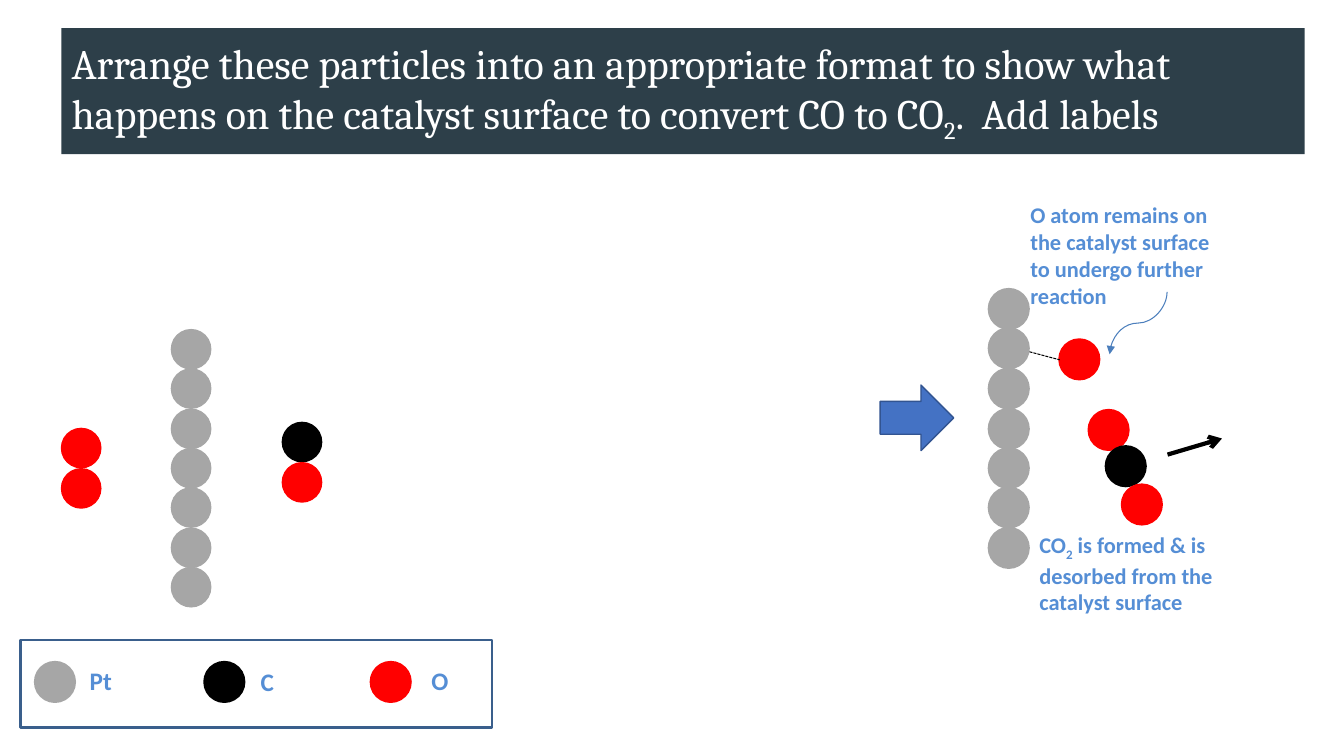
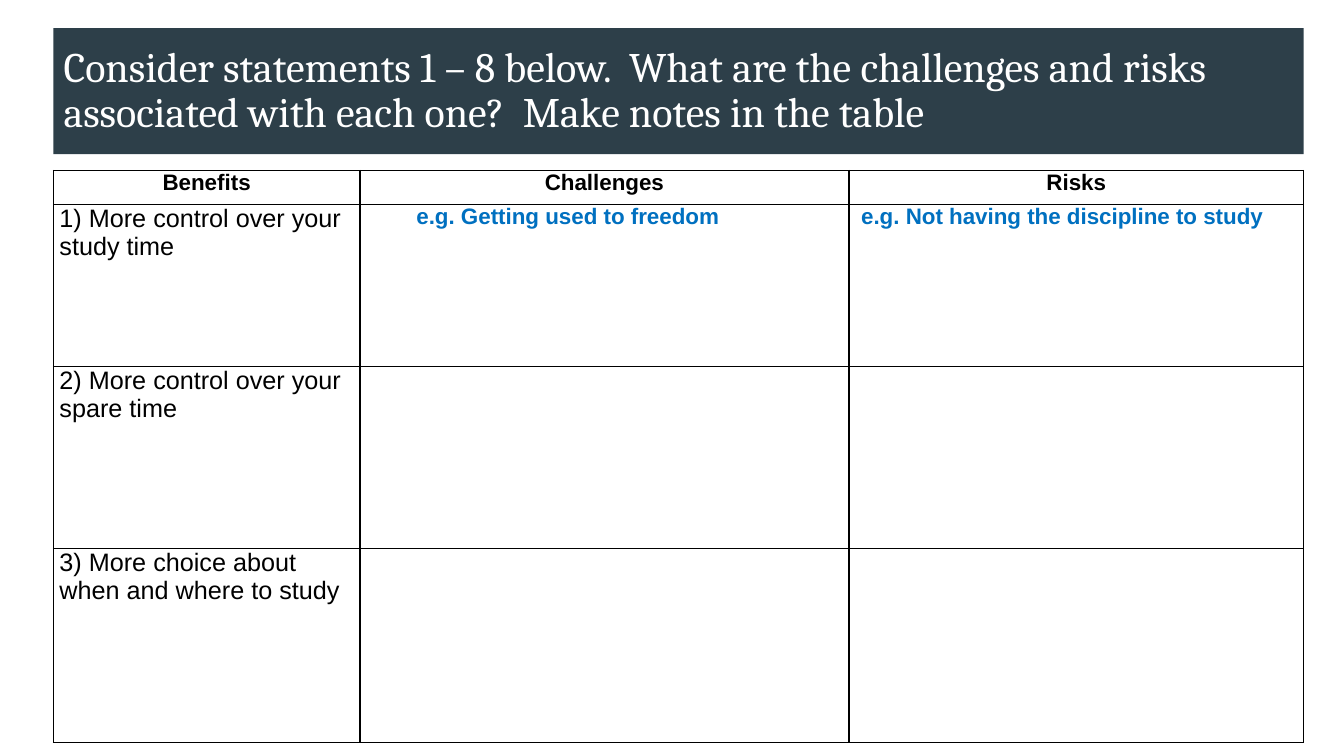
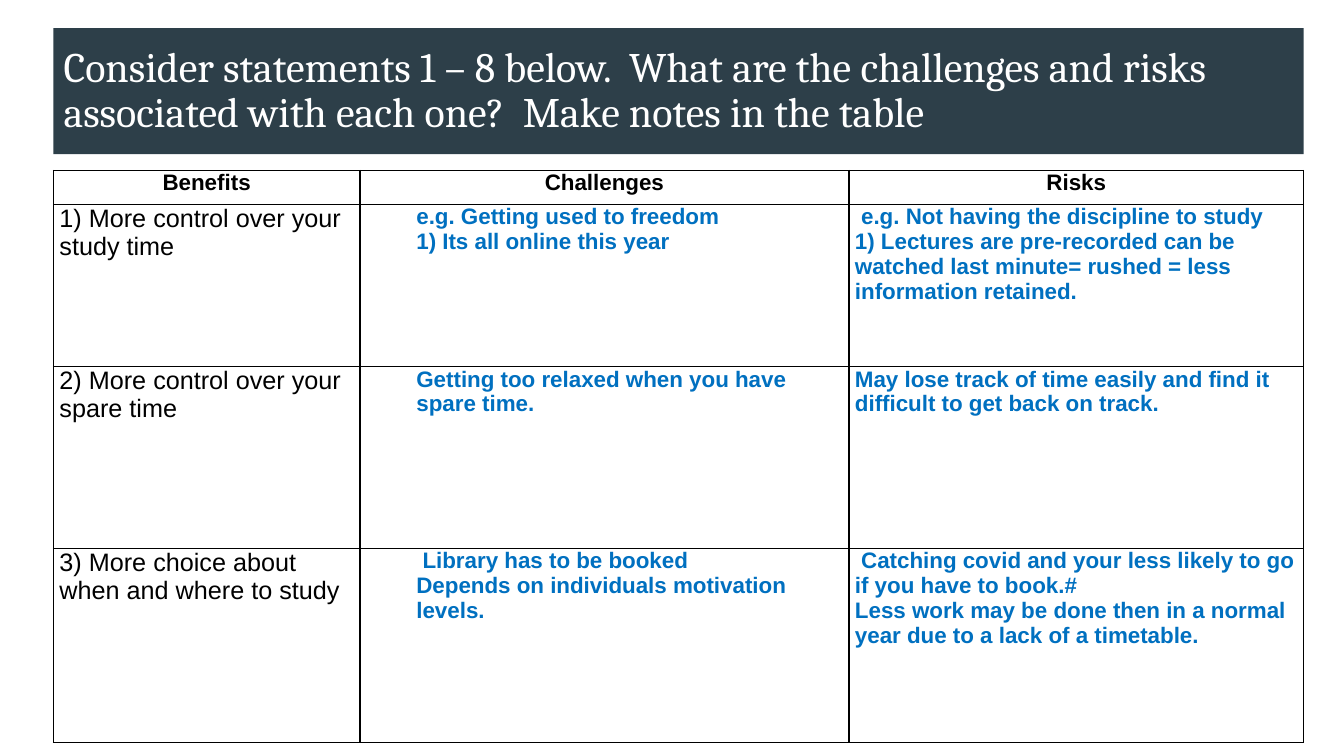
from dataclasses import dataclass
from typing import Optional

from lxml.etree import SubElement
from pptx import Presentation
from pptx.dml.color import RGBColor
from pptx.enum.dml import MSO_LINE
from pptx.enum.shapes import MSO_CONNECTOR, MSO_SHAPE
from pptx.enum.text import MSO_ANCHOR, MSO_AUTO_SIZE, PP_ALIGN
from pptx.oxml.ns import qn
from pptx.util import Pt

PX = 9144
SLIDE_W, SLIDE_H = 1333, 750
ATOM_SIZE = 39

WHITE = RGBColor(0xFF, 0xFF, 0xFF)
BLACK = RGBColor(0x00, 0x00, 0x00)
SLATE = RGBColor(0x2D, 0x3F, 0x49)
PLATINUM = RGBColor(0xA6, 0xA6, 0xA6)
OXYGEN = RGBColor(0xFF, 0x00, 0x00)
CARBON = BLACK
LABEL_BLUE = RGBColor(0x55, 0x8E, 0xD5)
KEY_BORDER = RGBColor(0x3A, 0x5F, 0x8C)
POINTER_BLUE = RGBColor(0x4B, 0x7E, 0xBC)
ARROW_FILL = RGBColor(0x44, 0x72, 0xC4)
ARROW_BORDER = RGBColor(0x32, 0x54, 0x91)
ANSWER_BLUE = RGBColor(0x00, 0x70, 0xC0)


@dataclass(frozen=True)
class Box:
    left: int
    top: int
    width: int
    height: int

    def emu(self) -> tuple[int, int, int, int]:
        return self.left * PX, self.top * PX, self.width * PX, self.height * PX


@dataclass(frozen=True)
class Style:
    font: str
    size: int
    color: RGBColor
    bold: bool = False


@dataclass(frozen=True)
class Span:
    text: str
    subscript: bool = False


@dataclass(frozen=True)
class Atom:
    left: int
    top: int
    color: RGBColor
    border: int = 2


@dataclass(frozen=True)
class Label:
    box: Box
    spans: tuple[Span, ...]
    size: int = 16
    wrap: bool = True


@dataclass(frozen=True)
class Link:
    start: tuple[int, int]
    end: tuple[int, int]
    color: RGBColor
    width: float
    kind: MSO_CONNECTOR = MSO_CONNECTOR.STRAIGHT
    dash: Optional[MSO_LINE] = None
    head: Optional[str] = None
    rotation: int = 0


@dataclass(frozen=True)
class Benefit:
    statement: str
    challenges: tuple[str, ...] = ()
    risks: tuple[str, ...] = ()


TITLE_STYLE = Style("Cambria", 30, WHITE)
HEADER_STYLE = Style("Arial", 16, BLACK, True)
STATEMENT_STYLE = Style("Arial", 18, BLACK)
ANSWER_STYLE = Style("Arial", 16, ANSWER_BLUE, True)

PARTICLES_TITLE_BOX = Box(61, 28, 1233, 125)
NOTES_TITLE_BOX = Box(53, 28, 1240, 125)
PARTICLES_TITLE = (
    Span("Arrange these particles into an appropriate format to show what "
         "happens on the catalyst surface to convert CO to CO"),
    Span("2", True),
    Span(".  Add labels"),
)
NOTES_TITLE = (
    Span("Consider statements 1 – 8 below.  What are the challenges and risks "
         "associated with each one?  Make notes in the table"),
)

NOTES_BOX = Box(53, 169, 1240, 568)
COLUMN_WIDTHS = (304, 485, 451)
ROW_HEIGHTS = (34, 161, 180, 193)
HEADERS = ("Benefits", "Challenges", "Risks")
CELL_INSET = 6
CHALLENGE_INDENT = 50

STATEMENTS = (
    "1) More control over your study time",
    "2) More control over your spare time",
    "3) More choice about when and where to study",
)
FREEDOM = "e.g. Getting used to freedom"
DISCIPLINE = " e.g. Not having the discipline to study"
BLANK_NOTES = (
    Benefit(STATEMENTS[0], (FREEDOM,), (DISCIPLINE,)),
    Benefit(STATEMENTS[1]),
    Benefit(STATEMENTS[2]),
)
FILLED_NOTES = (
    Benefit(
        STATEMENTS[0],
        (FREEDOM, "1) Its all online this year"),
        (DISCIPLINE, "1) Lectures are pre-recorded can be watched last minute= "
                     "rushed = less information retained."),
    ),
    Benefit(
        STATEMENTS[1],
        ("Getting too relaxed when you have spare time.",),
        ("May lose track of time easily and find it difficult to get back on track.",),
    ),
    Benefit(
        STATEMENTS[2],
        (" Library has to be booked", "Depends on individuals motivation levels."),
        (" Catching covid and your less likely to go if you have to book.#",
         "Less work may be done then in a normal year due to a lack of a timetable."),
    ),
)


def platinum_surface(left: int, top: int, bottom: int, border: int) -> list[Atom]:
    count = 7
    return [Atom(left, round(top + i * (bottom - top) / (count - 1)), PLATINUM, border)
            for i in range(count)]


ATOMS = (
    *platinum_surface(170, 327, 563, 1),
    Atom(61, 425, OXYGEN, 1),
    Atom(61, 465, OXYGEN, 1),
    Atom(280, 419, CARBON, 1),
    Atom(280, 459, OXYGEN, 1),
    Atom(35, 657, PLATINUM),
    Atom(203, 657, CARBON),
    Atom(368, 657, OXYGEN),
    *platinum_surface(981, 287, 524, 2),
    Atom(1051, 337, OXYGEN),
    Atom(1080, 407, OXYGEN),
    Atom(1097, 443, CARBON),
    Atom(1113, 481, OXYGEN),
)
LABELS = (
    Label(Box(79, 655, 43, 40), (Span("Pt"),), 18, False),
    Label(Box(243, 656, 39, 40), (Span(" C"),), 18, False),
    Label(Box(418, 655, 37, 40), (Span("O"),), 18, False),
    Label(Box(1012, 195, 199, 118),
          (Span("O atom remains on the catalyst surface to undergo further reaction"),)),
    Label(Box(1021, 522, 199, 91),
          (Span("CO"), Span("2", True),
           Span(" is formed & is desorbed from the catalyst surface"))),
)
LINKS = (
    Link((1021, 349), (1051, 357), BLACK, 0.75, dash=MSO_LINE.SQUARE_DOT),
    Link((1158, 451), (1212, 435), BLACK, 3, head="arrow"),
    Link((1098, 292), (1160, 349), POINTER_BLUE, 0.75, MSO_CONNECTOR.CURVE,
         head="triangle", rotation=90),
)


def add_span(paragraph, span: Span, style: Style) -> None:
    run = paragraph.add_run()
    run.text = span.text
    run.font.name = style.font
    run.font.size = Pt(style.size)
    run.font.bold = style.bold
    run.font.color.rgb = style.color
    if span.subscript:
        run._r.get_or_add_rPr().set("baseline", "-25000")


def add_titled_slide(deck, box: Box, spans: tuple[Span, ...]):
    slide = deck.slides.add_slide(deck.slide_layouts[5])
    title = slide.shapes.title
    title.left, title.top, title.width, title.height = box.emu()
    title.fill.solid()
    title.fill.fore_color.rgb = SLATE
    title.text_frame.vertical_anchor = MSO_ANCHOR.MIDDLE
    paragraph = title.text_frame.paragraphs[0]
    paragraph.alignment = PP_ALIGN.LEFT
    paragraph.line_spacing = 0.9
    for span in spans:
        add_span(paragraph, span, TITLE_STYLE)
    return slide


def add_figure(slide, preset: MSO_SHAPE, box: Box, fill: Optional[RGBColor],
               border: RGBColor, width: int) -> None:
    figure = slide.shapes.add_shape(preset, *box.emu())
    figure.shadow.inherit = False
    if fill is None:
        figure.fill.background()
    else:
        figure.fill.solid()
        figure.fill.fore_color.rgb = fill
    figure.line.color.rgb = border
    figure.line.width = Pt(width)


def add_atom(slide, atom: Atom) -> None:
    box = Box(atom.left, atom.top, ATOM_SIZE, ATOM_SIZE)
    add_figure(slide, MSO_SHAPE.OVAL, box, atom.color, atom.color, atom.border)


def add_label(slide, label: Label) -> None:
    frame = slide.shapes.add_textbox(*label.box.emu()).text_frame
    frame.word_wrap = label.wrap
    frame.auto_size = MSO_AUTO_SIZE.SHAPE_TO_FIT_TEXT
    style = Style("Calibri", label.size, LABEL_BLUE, True)
    for span in label.spans:
        add_span(frame.paragraphs[0], span, style)


def add_link(slide, link: Link) -> None:
    ends = (value * PX for value in (*link.start, *link.end))
    connector = slide.shapes.add_connector(link.kind, *ends)
    connector.line.color.rgb = link.color
    connector.line.width = Pt(link.width)
    if link.dash is not None:
        connector.line.dash_style = link.dash
    properties = connector.element.spPr
    if link.head:
        SubElement(properties.find(qn("a:ln")), qn("a:tailEnd"), type=link.head)
    if link.rotation:
        properties.find(qn("a:xfrm")).set("rot", str(link.rotation * 60000))
    SubElement(properties, qn("a:effectLst"))


def format_cell(cell) -> None:
    cell.margin_left = cell.margin_right = CELL_INSET * PX
    cell.margin_top = cell.margin_bottom = 0
    properties = cell._tc.get_or_add_tcPr()
    for side in ("lnL", "lnR", "lnT", "lnB"):
        border = SubElement(properties, qn(f"a:{side}"), w=str(Pt(1)))
        fill = SubElement(border, qn("a:solidFill"))
        SubElement(fill, qn("a:srgbClr"), val=str(BLACK))
    cell.fill.solid()
    cell.fill.fore_color.rgb = WHITE


def fill_cell(cell, lines: tuple[str, ...], style: Style,
              alignment: PP_ALIGN = PP_ALIGN.LEFT, indent: int = 0) -> None:
    format_cell(cell)
    frame = cell.text_frame
    for number, line in enumerate(lines):
        paragraph = frame.add_paragraph() if number else frame.paragraphs[0]
        paragraph.alignment = alignment
        if indent:
            properties = paragraph._p.get_or_add_pPr()
            properties.set("marL", str(indent * PX))
            properties.set("indent", "0")
        add_span(paragraph, Span(line), style)


def add_notes_table(slide, benefits: tuple[Benefit, ...]) -> None:
    table = slide.shapes.add_table(
        len(ROW_HEIGHTS), len(COLUMN_WIDTHS), *NOTES_BOX.emu()).table
    table.first_row = False
    table.horz_banding = False
    for column, width in zip(table.columns, COLUMN_WIDTHS):
        column.width = width * PX
    for row, height in zip(table.rows, ROW_HEIGHTS):
        row.height = height * PX
    for column, header in enumerate(HEADERS):
        fill_cell(table.cell(0, column), (header,), HEADER_STYLE, PP_ALIGN.CENTER)
    for row, benefit in enumerate(benefits, 1):
        fill_cell(table.cell(row, 0), (benefit.statement,), STATEMENT_STYLE)
        fill_cell(table.cell(row, 1), benefit.challenges, ANSWER_STYLE,
                  indent=CHALLENGE_INDENT)
        fill_cell(table.cell(row, 2), benefit.risks, ANSWER_STYLE)


def build_particles_slide(deck) -> None:
    slide = add_titled_slide(deck, PARTICLES_TITLE_BOX, PARTICLES_TITLE)
    add_figure(slide, MSO_SHAPE.RECTANGLE, Box(20, 635, 468, 87), None, KEY_BORDER, 2)
    for atom in ATOMS:
        add_atom(slide, atom)
    for label in LABELS:
        add_label(slide, label)
    for link in LINKS:
        add_link(slide, link)
    add_figure(slide, MSO_SHAPE.RIGHT_ARROW, Box(873, 382, 73, 65),
               ARROW_FILL, ARROW_BORDER, 1)


def build_notes_slide(deck, benefits: tuple[Benefit, ...]) -> None:
    slide = add_titled_slide(deck, NOTES_TITLE_BOX, NOTES_TITLE)
    add_notes_table(slide, benefits)


def main() -> None:
    deck = Presentation()
    deck.slide_width, deck.slide_height = SLIDE_W * PX, SLIDE_H * PX
    build_particles_slide(deck)
    for benefits in (BLANK_NOTES, FILLED_NOTES):
        build_notes_slide(deck, benefits)
    deck.save("out.pptx")


if __name__ == "__main__":
    main()
